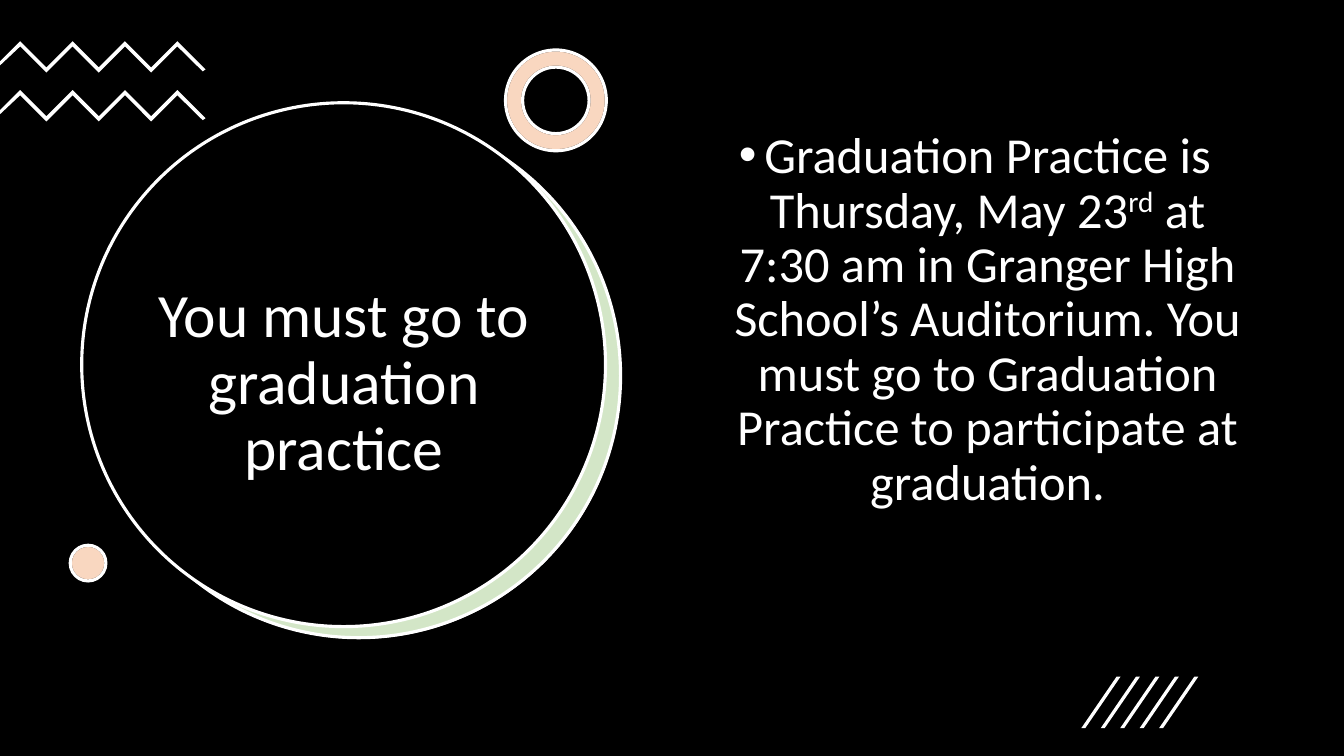
from dataclasses import dataclass
from typing import Optional

from lxml import etree
from pptx import Presentation
from pptx import util as u
from pptx.dml.color import RGBColor
from pptx.enum import shapes, text
from pptx.oxml import ns

COLORS = {"black": "000000", "white": "FFFFFF", "green": "70AD47", "orange": "ED7D31"}
TINT_ALPHA = 30000
OVAL = shapes.MSO_SHAPE.OVAL
DONUT = shapes.MSO_SHAPE.DONUT


@dataclass
class Round:
    """A circle or ring; lengths are in centimetres."""
    left: float
    top: float
    size: float
    fill: str
    line: Optional[str] = None
    kind: shapes.MSO_SHAPE = OVAL
    tinted: bool = False


ROUNDS = [
    Round(2.46, 2.9, 13.2, "white"),
    Round(2.44, 2.87, 13.2, "green", "white", tinted=True),
    Round(2.06, 2.59, 13.2, "black", "white"),
    Round(12.74, 1.26, 2.54, "white", "black", DONUT),
    Round(12.74, 1.26, 2.54, "orange", "white", DONUT, True),
    Round(1.77, 13.74, 0.9, "white", "black"),
    Round(1.77, 13.74, 0.9, "orange", "white", tinted=True),
]


def color(name: str) -> RGBColor:
    return RGBColor.from_string(COLORS[name])


def paint(shape, fill: str, line: Optional[str] = None) -> None:
    shape.shadow.inherit = False
    shape.fill.solid()
    shape.fill.fore_color.rgb = color(fill)
    if line:
        shape.line.color.rgb = color(line)
        shape.line.width = u.Pt(2.25)
    else:
        shape.line.fill.background()


def draw_round(page, item: Round) -> None:
    shape = page.shapes.add_shape(item.kind, u.Cm(item.left), u.Cm(item.top),
                                  u.Cm(item.size), u.Cm(item.size))
    if item.kind == DONUT:
        shape.adjustments[0] = 0.17
    paint(shape, item.fill, item.line)
    if item.tinted:
        fill_color = shape.element.spPr.find(ns.qn("a:solidFill"))[0]
        etree.SubElement(fill_color, ns.qn("a:alpha"), val=str(TINT_ALPHA))


def draw_polygon(page, points: list[tuple[float, float]]) -> None:
    corners = [(u.Cm(x), u.Cm(y)) for x, y in points]
    builder = page.shapes.build_freeform(*corners[0])
    builder.add_line_segments(corners[1:], close=True)
    paint(builder.convert_to_shape(), "white")


def draw_zigzag(page, top: float) -> None:
    upper = [(0.51 + 0.66 * i, top + 0.66 * (i % 2)) for i in range(7)]
    lower = [(x, y + 0.13) for x, y in reversed(upper)]
    draw_polygon(page, [(0, top + 0.51), *upper, (5.18, top + 0.71),
                        (5.11, top + 0.76), *lower, (0, top + 0.61)])


def draw_slash(page, left: float) -> None:
    top, bottom = 17.05, 18.35
    draw_polygon(page, [(left + 0.1, bottom), (left, bottom),
                        (left + 0.89, top), (left + 0.99, top)])


def set_text(box, place: tuple[float, float, float, float], anchor, size: int,
             spans: list[str]):
    """Place a placeholder in front and fill its one paragraph."""
    box.left, box.top, box.width, box.height = map(u.Cm, place)
    box.element.getparent().append(box.element)
    frame = box.text_frame
    frame.word_wrap = True
    frame.auto_size = text.MSO_AUTO_SIZE.NONE
    frame.vertical_anchor = anchor
    para = frame.paragraphs[0]
    for words in spans:
        para.add_run().text = words
    para.alignment = text.PP_ALIGN.CENTER
    para.line_spacing = 0.9
    para.space_before = u.Pt(0)
    return para


def set_font(para, size: int) -> None:
    para.font.name = "Calibri"
    para.font.size = u.Pt(size)
    para.font.color.rgb = color("white")


def add_bullet(para) -> None:
    props = para._p.get_or_add_pPr()
    props.set("marL", str(u.Cm(0.64)))
    props.set("indent", str(u.Cm(-0.64)))
    etree.SubElement(props, ns.qn("a:buFont"), typeface="Arial")
    etree.SubElement(props, ns.qn("a:buChar"), char="•")


def main() -> None:
    deck = Presentation()
    deck.slide_width, deck.slide_height = u.Cm(33.87), u.Cm(19.05)
    page = deck.slides.add_slide(deck.slide_layouts[1])
    page.background.fill.solid()
    page.background.fill.fore_color.rgb = color("black")

    for item in ROUNDS:
        draw_round(page, item)
    for row in range(2):
        draw_zigzag(page, 1.04 + 1.23 * row)
    for column in range(5):
        draw_slash(page, 27.25 + 0.49 * column)

    title = set_text(page.shapes.title, (3.07, 5.21, 11.2, 8.94),
                     text.MSO_ANCHOR.MIDDLE, 44,
                     ["You must go to graduation practice"])
    set_font(title, 44)

    body = set_text(page.placeholders[1], (17.32, 3.15, 14.5, 12.09),
                    text.MSO_ANCHOR.TOP, 36,
                    ["Graduation Practice is Thursday, May 23", "rd",
                     " at 7:30 am in Granger High School’s Auditorium. You must go to "
                     "Graduation Practice to participate at graduation."])
    add_bullet(body)
    set_font(body, 36)
    body.runs[1].font._element.set("baseline", "30000")

    deck.save("out.pptx")


if __name__ == "__main__":
    main()
